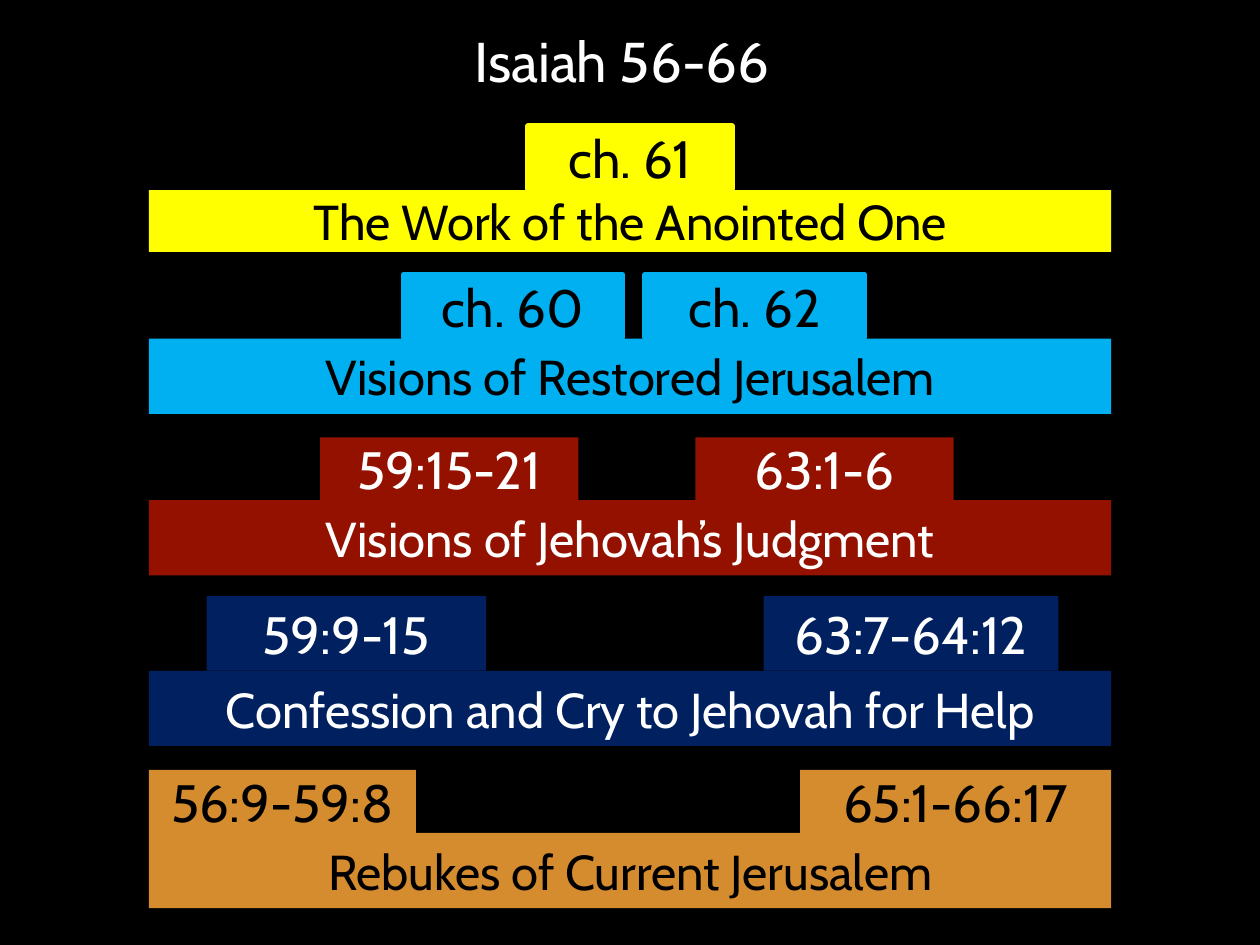
from pptx import Presentation
from pptx.dml.color import RGBColor
from pptx.enum.shapes import MSO_SHAPE
from pptx.enum.text import MSO_ANCHOR, MSO_AUTO_SIZE, PP_ALIGN
from pptx.util import Pt

BLACK, WHITE = "000000", "FFFFFF"
BAR_LEFT, BAR_WIDTH = 85, 550


def color(hex_string):
    return RGBColor.from_string(hex_string)


class Deck:
    """Holds the text style and the current slide."""

    font = "Cabin"
    title_size, tab_size, bar_size = 32, 30, 28

    def __init__(self, prs):
        self.s = prs.slides.add_slide(prs.slide_layouts[5])
        fill = self.s.background.fill
        fill.solid()
        fill.fore_color.rgb = color(BLACK)

    def add_text(self, tf, text, size, ink):
        tf.word_wrap = True
        tf.vertical_anchor = MSO_ANCHOR.MIDDLE
        p = tf.paragraphs[0]
        p.alignment = PP_ALIGN.CENTER
        r = p.add_run()
        r.text = text
        r.font.name = self.font
        r.font.size = Pt(size)
        r.font.color.rgb = color(ink)
        return p

    def title(self, text, left, top, width, height):
        sp = self.s.shapes.title
        sp.left, sp.top, sp.width, sp.height = map(Pt, (left, top, width, height))
        sp.text_frame.auto_size = MSO_AUTO_SIZE.NONE
        p = self.add_text(sp.text_frame, text, self.title_size, WHITE)
        p.line_spacing = 0.9

    def block(self, text, left, top, width, height, size, fill, ink, outlined=False):
        box = map(Pt, (left, top, width, height))
        sp = self.s.shapes.add_shape(MSO_SHAPE.RECTANGLE, *box)
        sp.shadow.inherit = False
        sp.fill.solid()
        sp.fill.fore_color.rgb = color(fill)
        if outlined:
            sp.line.color.rgb = color(fill)
            sp.line.width = Pt(3)
        else:
            sp.line.fill.background()
        self.add_text(sp.text_frame, text, size, ink)

    def tier(self, theme, fill, ink, tab_top, tab_height, bar_top, bar_height,
             outlined, tabs):
        # Passage tabs stand on a full-width theme bar
        for passage, left, width in tabs:
            self.block(passage, left, tab_top, width, tab_height,
                       self.tab_size, fill, ink, outlined)
        self.block(theme, BAR_LEFT, bar_top, BAR_WIDTH, bar_height,
                   self.bar_size, fill, ink)


# theme, fill, ink, tab top, tab height, bar top, bar height, outlined tabs,
# [(passage, left, width)]
TIERS = [
    ("The Work of the Anointed One", "FFFF00", BLACK, 72, 36, 108.7, 35.3, True,
     [("ch. 61", 301.7, 116.6)]),
    ("Visions of Restored Jerusalem", "00B0F0", BLACK, 157, 36, 193.5, 43, True,
     [("ch. 60", 230.4, 125.3), ("ch. 62", 368.6, 125.3)]),
    ("Visions of Jehovah’s Judgment", "941100", WHITE, 250, 36, 285.8, 43, False,
     [("59:15-21", 182.9, 147.6), ("63:1-6", 397.4, 147.6)]),
    ("Confession and Cry to Jehovah for Help", "002060", WHITE, 340.6, 42.7,
     383.3, 43, False,
     [("59:9-15", 118, 159.8), ("63:7-64:12", 436.4, 168.5)]),
    ("Rebukes of Current Jerusalem", "D58C2E", BLACK, 440, 36, 476, 43, False,
     [("56:9-59:8", BAR_LEFT, 152.6), ("65:1-66:17", 457.2, 177.8)]),
]


def main():
    prs = Presentation()
    prs.slide_width, prs.slide_height = Pt(720), Pt(540)
    deck = Deck(prs)

    # Heading
    deck.title("Isaiah 56-66", 45, 8, 621, 58)

    # Pyramid of tiers, from peak to base
    for tier in TIERS:
        deck.tier(*tier)

    prs.save("out.pptx")


if __name__ == "__main__":
    main()
